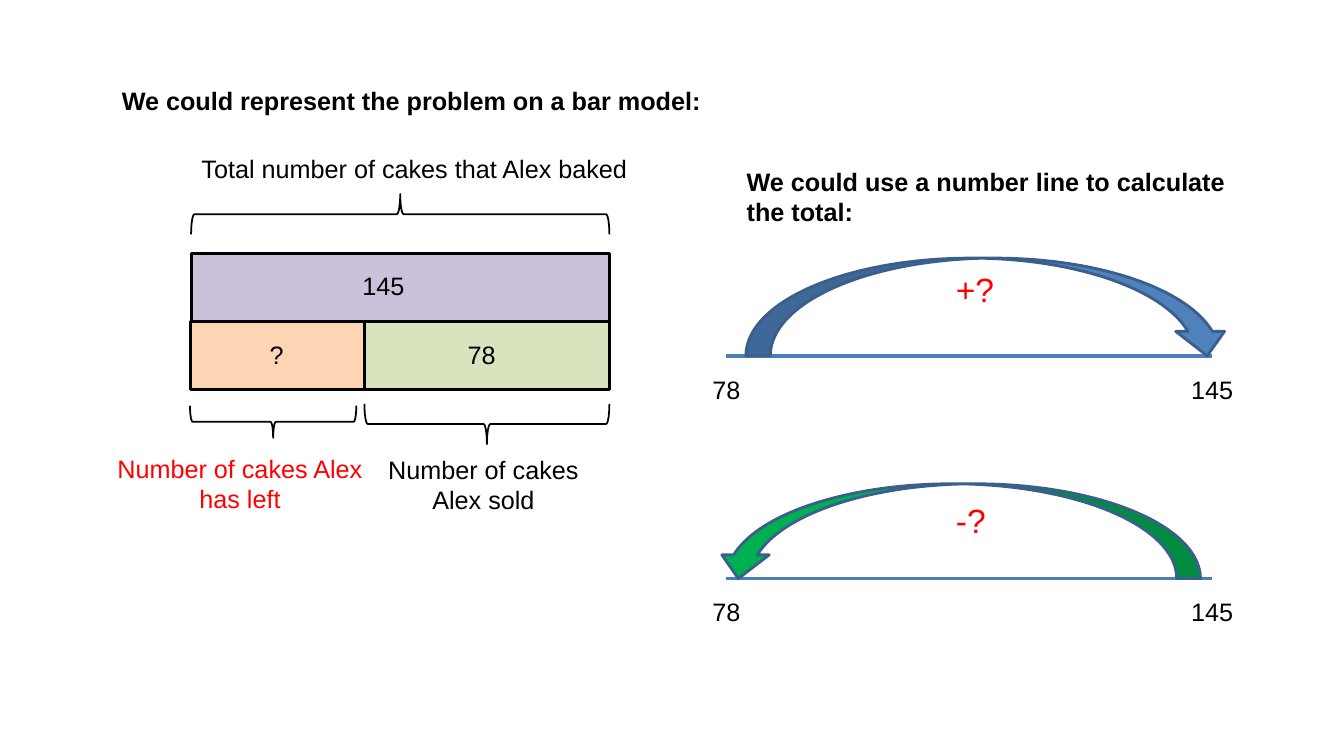
from lxml.etree import SubElement
from pptx import Presentation
from pptx.dml.color import RGBColor
from pptx.enum.shapes import MSO_CONNECTOR, MSO_SHAPE
from pptx.enum.text import PP_ALIGN
from pptx.oxml.ns import qn
from pptx.util import Pt

BLACK, RED, ARROW_EDGE, LINE_BLUE = "000000", "FF0000", "3A5F8C", "4B7EBC"


def color(value):
    return RGBColor.from_string(value)


class CakeSlide:
    """Draws bar models and number lines on one slide in a shared style."""

    font_name = "Arial"
    label_height = 29

    def __init__(self, page):
        self.page = page

    def text(self, left, top, width, content, height=label_height, size=18,
             ink=BLACK, bold=False, align=PP_ALIGN.LEFT):
        box = self.page.shapes.add_textbox(Pt(left), Pt(top), Pt(width), Pt(height))
        box.text_frame.word_wrap = True
        para = box.text_frame.paragraphs[0]
        para.alignment = align
        span = para.add_run()
        span.text = content
        span.font.name = self.font_name
        span.font.size = Pt(size)
        span.font.bold = bold
        span.font.color.rgb = color(ink)

    def shape(self, kind, left, top, width, height, fill=None, edge=BLACK, weight=2.0):
        shape = self.page.shapes.add_shape(kind, Pt(left), Pt(top), Pt(width), Pt(height))
        shape.shadow.inherit = False
        if fill:
            shape.fill.solid()
            shape.fill.fore_color.rgb = color(fill)
        else:
            shape.fill.background()
        shape.line.color.rgb = color(edge)
        shape.line.width = Pt(weight)
        return shape

    def bar(self, left, top, width, fill):
        self.shape(MSO_SHAPE.RECTANGLE, left, top, width, 48.5, fill)

    def brace(self, left, top, width, height, rotation):
        brace = self.shape(MSO_SHAPE.RIGHT_BRACE, left + (width - height) / 2,
                           top + (height - width) / 2, height, width, weight=1.25)
        brace.rotation = rotation

    def line(self, left, right, top):
        line = self.page.shapes.add_connector(
            MSO_CONNECTOR.STRAIGHT, Pt(left), Pt(top), Pt(right), Pt(top))
        line.line.color.rgb = color(LINE_BLUE)
        line.line.width = Pt(2.5)
        SubElement(line.element.spPr, qn("a:effectLst"))

    def number_line(self, top, arrow_left, arrow_height, fill, change, change_top,
                    backwards=False):
        self.line(518.4, 865.4, top)
        for left, number in ((501.8, "78"), (843.8, "145")):
            self.text(left, top + 9.4, 62.6, number)
        arrow = self.shape(MSO_SHAPE.CURVED_DOWN_ARROW, arrow_left, top - arrow_height,
                           347, arrow_height, fill, ARROW_EDGE)
        if backwards:
            arrow.element.spPr.xfrm.set("flipH", "1")
        self.text(675.7, change_top, 62.6, change, height=36, size=24, ink=RED)


def main():
    deck = Presentation()
    deck.slide_width, deck.slide_height = Pt(960), Pt(540)
    slide = CakeSlide(deck.slides.add_slide(deck.slide_layouts[6]))
    center = PP_ALIGN.CENTER

    slide.text(79.9, 57.6, 763.9, "We could represent the problem on a bar model:",
               height=421.9, bold=True)
    slide.bar(136.8, 180.9, 298.8, "CCC1DA")
    slide.bar(254.9, 229.5, 180.7, "D7E4BD")
    slide.bar(136.1, 229.5, 124.6, "FCD5B5")
    slide.text(199.4, 189.4, 149, "145", align=center)
    slide.text(326.9, 239, 309.6, "78")
    slide.text(185.5, 239, 199, "?")

    slide.brace(136.5, 138.6, 298.8, 28.8, 270)
    slide.brace(260.3, 288.5, 175, 28.8, 90)
    slide.brace(135.7, 289.8, 118.8, 23, 90)
    slide.text(136.8, 105.8, 325.4, "Total number of cakes that Alex baked")
    slide.text(257.8, 321.1, 175, "Number of cakes Alex sold", height=51, align=center)
    slide.text(67, 320.4, 208.8, "Number of cakes Alex has left", height=51,
               ink=RED, align=center)

    slide.text(526.3, 115.2, 374.4, "We could use a number line to calculate the total:",
               height=51.8, bold=True)
    slide.number_line(254.2, 532.8, 69.8, "4F81BD", "+?", 188.6)
    slide.number_line(413.3, 510.5, 67.7, "00B050", "-?", 353.5, backwards=True)

    deck.save("out.pptx")


if __name__ == "__main__":
    main()
